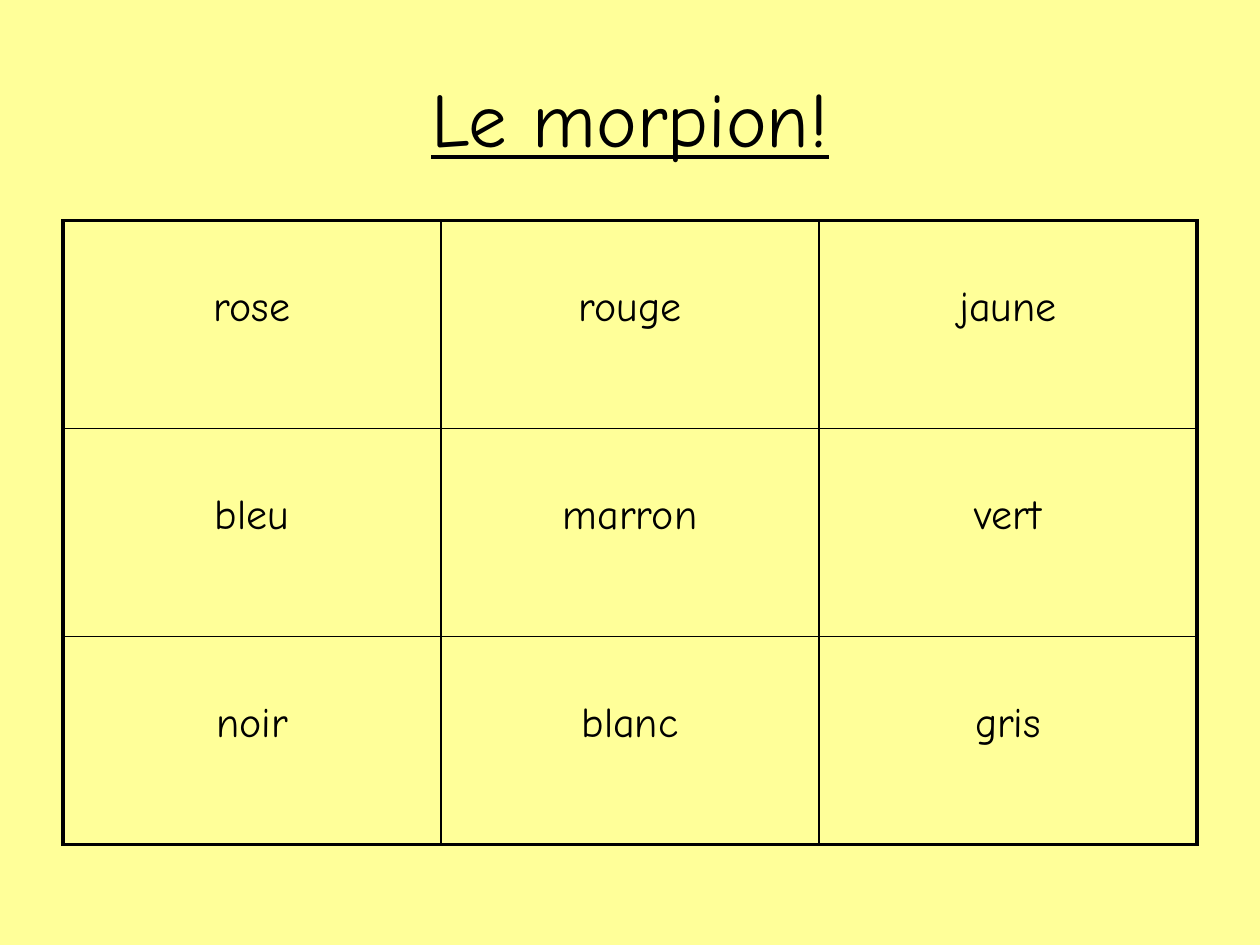
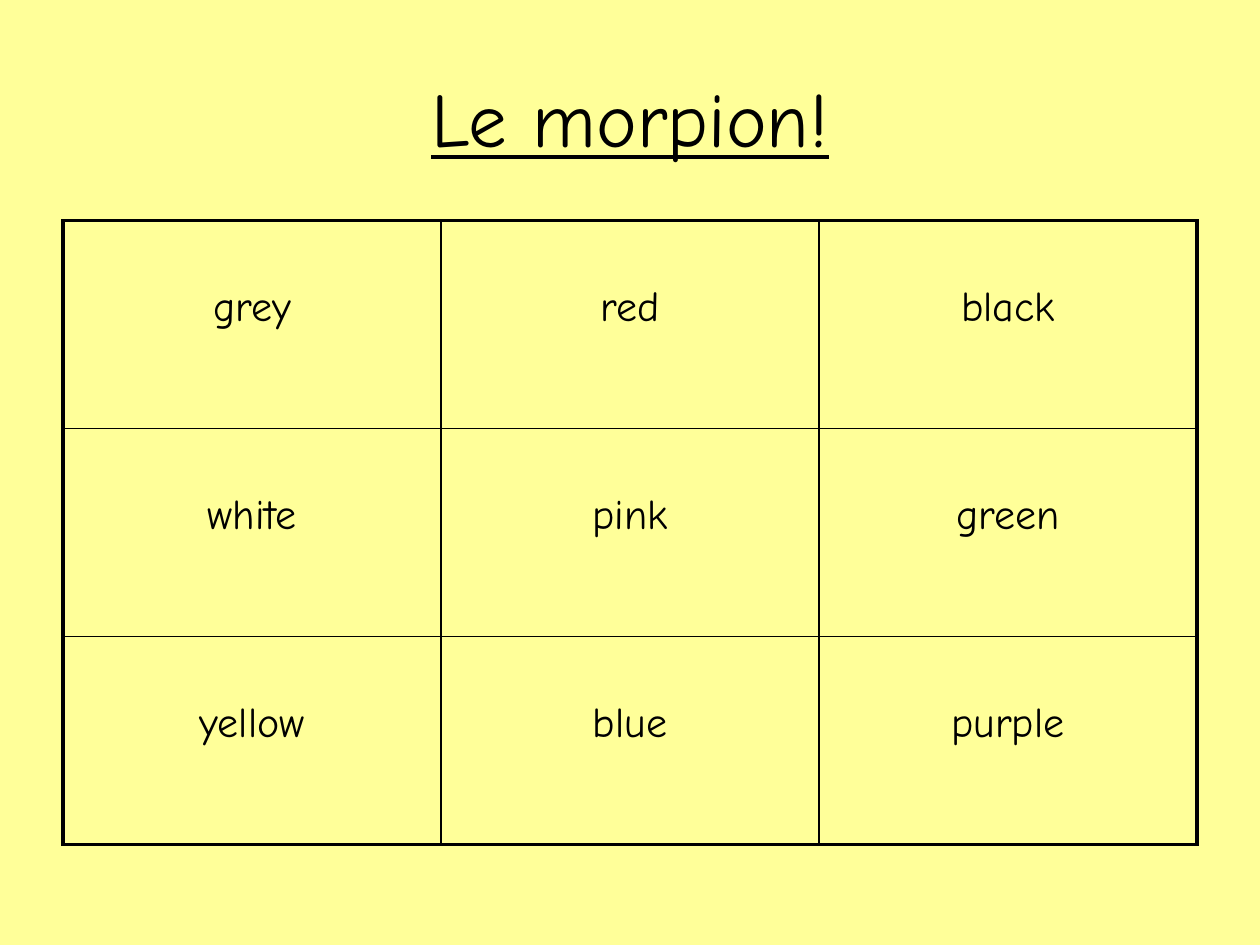
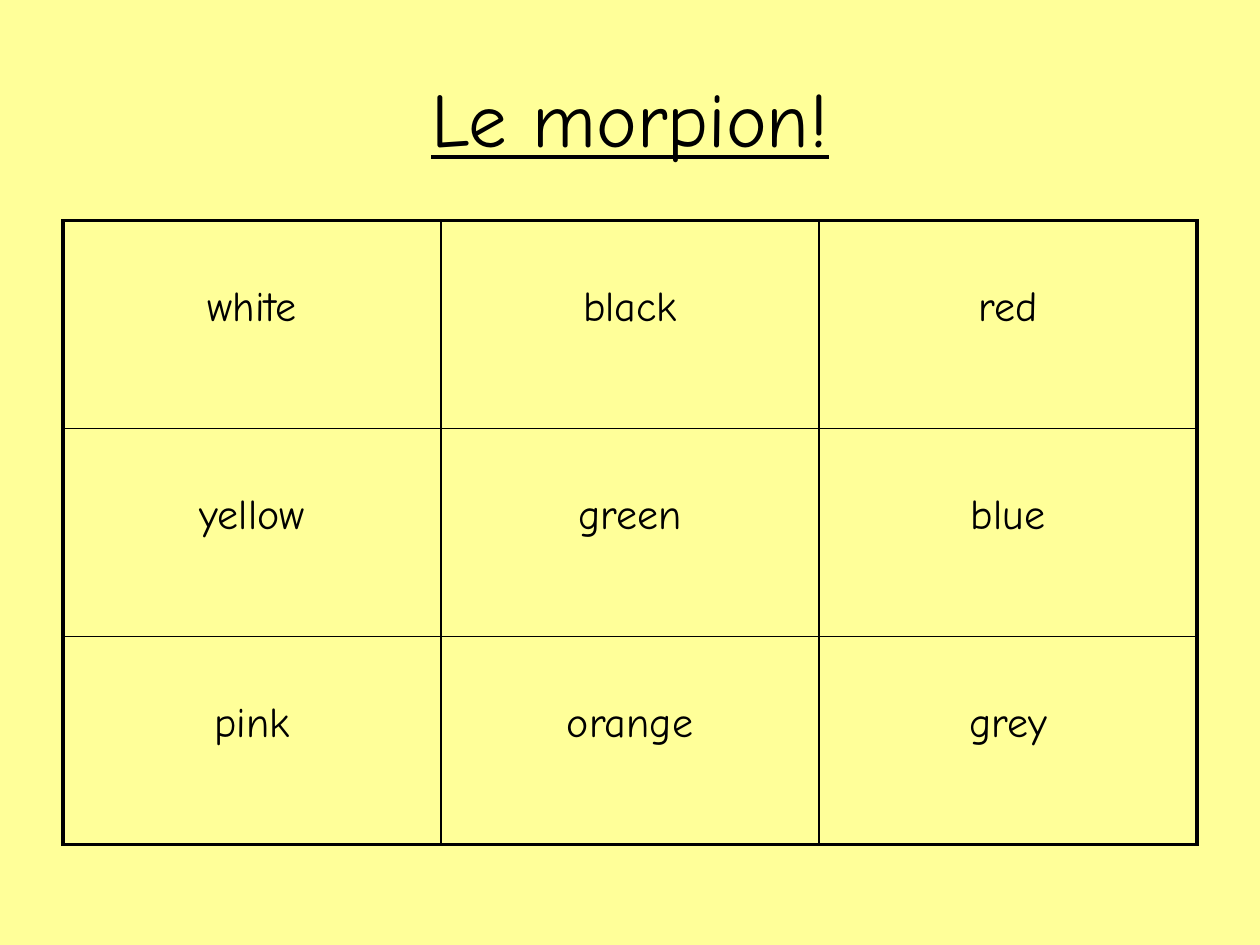
from dataclasses import dataclass

from lxml.etree import SubElement
from pptx import Presentation
from pptx.dml.color import RGBColor
from pptx.enum.text import MSO_VERTICAL_ANCHOR as Anchor, PP_PARAGRAPH_ALIGNMENT as Align
from pptx.oxml.ns import qn
from pptx.presentation import Presentation as Deck
from pptx.slide import Slide
from pptx.table import _Cell as Cell
from pptx.text.text import TextFrame
from pptx.util import Cm, Length, Pt


@dataclass(frozen=True)
class Theme:
    paper: str = "FFFF99"
    ink: str = "000000"
    font: str = "Comic Neue"
    title_size: Length = Pt(44)
    word_size: Length = Pt(24)
    outer_line: Length = Pt(2.25)
    inner_line: Length = Pt(1)


@dataclass(frozen=True)
class Board:
    title: str
    rows: tuple[str, ...]

    @property
    def words(self) -> list[list[str]]:
        return [row.split() for row in self.rows]


THEME = Theme()
TITLE_ONLY = 5
MARGIN = Cm(1.27)
TITLE_PLACE = {"left": MARGIN, "top": Cm(0.76), "width": Cm(22.86), "height": Cm(3.18)}
GRID_TOP = Cm(4.45)
CELL_WIDTH, CELL_HEIGHT = Cm(7.62), Cm(4.19)
WORD_DROP = Cm(1.27)

GAME = "Le morpion!"
BOARDS = (
    Board(GAME, ("rose rouge jaune", "bleu marron vert", "noir blanc gris")),
    Board(GAME, ("grey red black", "white pink green", "yellow blue purple")),
    Board(GAME, ("white black red", "yellow green blue", "pink orange grey")),
)


def write_centred(frame: TextFrame, text: str, size: Length, underline: bool = False) -> None:
    para = frame.paragraphs[0]
    para.alignment = Align.CENTER
    span = para.add_run()
    span.text = text
    style = {"name": THEME.font, "size": size, "underline": underline, "bold": False}
    for name, value in style.items():
        setattr(span.font, name, value)
    span.font.color.rgb = RGBColor.from_string(THEME.ink)


def draw_title(page: Slide, text: str) -> None:
    box = page.shapes.title
    for name, value in TITLE_PLACE.items():
        setattr(box, name, value)
    box.text_frame.vertical_anchor = Anchor.MIDDLE
    write_centred(box.text_frame, text, THEME.title_size, underline=True)


def set_borders(cell: Cell, outer_sides: dict[str, bool]) -> None:
    """Draw each side of the cell, thicker where it lies on the board's edge."""
    properties = cell._tc.get_or_add_tcPr()
    for side, is_outer in outer_sides.items():
        width = THEME.outer_line if is_outer else THEME.inner_line
        line = SubElement(properties, qn(f"a:ln{side}"), w=str(int(width)))
        fill = SubElement(line, qn("a:solidFill"))
        SubElement(fill, qn("a:srgbClr"), val=THEME.ink)


def draw_grid(page: Slide, words: list[list[str]]) -> None:
    row_count, column_count = len(words), len(words[0])
    table = page.shapes.add_table(
        row_count, column_count, MARGIN, GRID_TOP,
        CELL_WIDTH * column_count, CELL_HEIGHT * row_count,
    ).table
    table.first_row = table.horz_banding = False
    for row, row_words in enumerate(words):
        table.rows[row].height = CELL_HEIGHT
        for column, word in enumerate(row_words):
            cell = table.cell(row, column)
            set_borders(cell, {
                "L": column == 0,
                "R": column == column_count - 1,
                "T": row == 0,
                "B": row == row_count - 1,
            })
            cell.fill.background()
            cell.vertical_anchor = Anchor.TOP
            cell.margin_top = WORD_DROP
            write_centred(cell.text_frame, word, THEME.word_size)


def draw_board(deck: Deck, board: Board) -> None:
    page = deck.slides.add_slide(deck.slide_layouts[TITLE_ONLY])
    draw_title(page, board.title)
    draw_grid(page, board.words)


def main() -> None:
    deck = Presentation()
    deck.slide_width, deck.slide_height = Cm(25.4), Cm(19.05)
    paper = deck.slide_master.background.fill
    paper.solid()
    paper.fore_color.rgb = RGBColor.from_string(THEME.paper)
    for board in BOARDS:
        draw_board(deck, board)
    deck.save("out.pptx")


if __name__ == "__main__":
    main()
